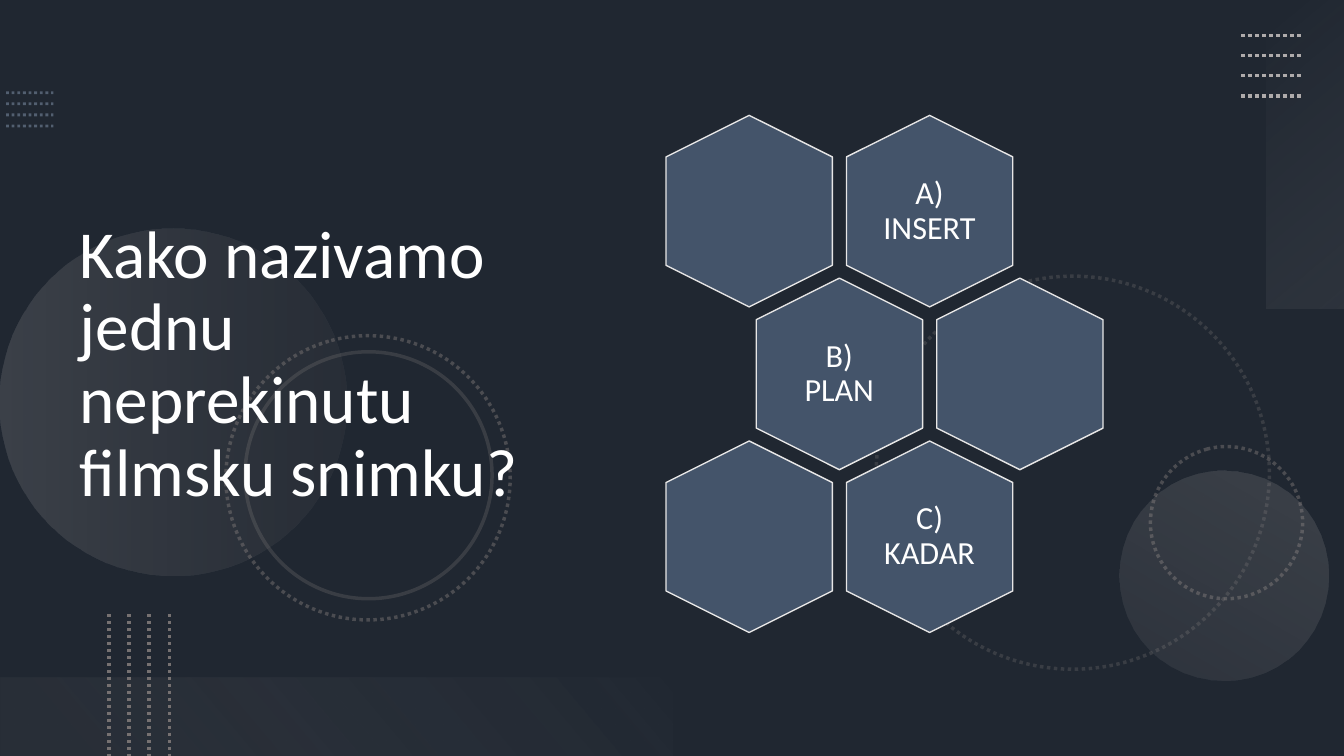
from pptx import Presentation
from pptx import util as u
from pptx.dml.color import RGBColor
from pptx.enum import dml, shapes, text
from pptx.oxml.ns import qn
from lxml import etree

theme = {
    "slate": "44546A", "black": "000000", "white": "FFFFFF", "edge": "E7E6E6",
    "steel": "8497B0", "grey": "767171", "silver": "AFABAB", "mist": "F5F5F5",
    "font": "Calibri", "title": 48, "answer": 23,
}
colour = {name: RGBColor.from_string(theme[name]) for name in
          ("slate", "black", "white", "edge", "steel", "grey", "silver", "mist")}
W, H = 13.33, 7.5
DOTS = dml.MSO_LINE.ROUND_DOT

deck = Presentation()
deck.slide_width, deck.slide_height = u.Inches(W), u.Inches(H)
slide = deck.slides.add_slide(deck.slide_layouts[5])
slide.background.fill.solid()
slide.background.fill.fore_color.rgb = colour["slate"]


def add_form(preset, box, rotation=0):
    form = slide.shapes.add_shape(preset, *(u.Inches(v) for v in box))
    form.rotation = rotation
    form.shadow.inherit = False
    form.fill.background()
    form.line.fill.background()
    return form


def fade(form, *opacities):
    """Set the opacity, in percent, of each colour in turn."""
    for tint, opacity in zip(form._element.spPr.iter(qn("a:srgbClr")), opacities):
        etree.SubElement(tint, qn("a:alpha")).set("val", str(opacity * 1000))


# Dark veil over the background
veil = add_form(shapes.MSO_SHAPE.RECTANGLE, (0, 0, W, H))
veil.fill.solid()
veil.fill.fore_color.rgb = colour["black"]
fade(veil, 53)

# Rings: left, top, diameter, dash, opacity
rings = [
    (8.69, 2.74, 3.9, DOTS, 30),
    (11.41, 4.43, 1.51, DOTS, 50),
    (2.24, 3.33, 2.82, DOTS, 50),
    (2.43, 3.49, 2.45, dml.MSO_LINE.SOLID, 30),
]
for left, top, size, dash, opacity in rings:
    ring = add_form(shapes.MSO_SHAPE.OVAL, (left, top, size, size), 75)
    ring.line.color.rgb = colour["grey"]
    ring.line.width = u.Pt(2.5)
    ring.line.dash_style = dash
    fade(ring, opacity)

# Gradient discs and bands: preset, box, rotation, angle, stops (place, colour, opacity)
OVAL, RECT = shapes.MSO_SHAPE.OVAL, shapes.MSO_SHAPE.RECTANGLE
glows = [
    (OVAL, (0, 2.27, 3.44, 3.44), 270, 90, [(0, "silver", 20), (1, "grey", 10)]),
    (OVAL, (11.1, 4.67, 2.08, 2.08), 210, 90, [(0, "silver", 10), (1, "silver", 20)]),
    (RECT, (11.42, 1.14, 3.06, 0.78), 270, 140, [(0, "mist", 0), (1, "silver", 10)]),
    (RECT, (0, 6.72, W / 2, 0.78), 180, 140, [(0.1, "grey", 10), (1, "mist", 0)]),
]
for preset, box, rotation, angle, stops in glows:
    glow = add_form(preset, box, rotation)
    glow.fill.gradient()
    glow.fill.gradient_angle = 360 - angle
    for stop, (place, name, _) in zip(glow.fill.gradient_stops, stops):
        stop.position = place
        stop.color.rgb = colour[name]
    fade(glow, *(opacity for _, _, opacity in stops))

# Dotted hatches of four lines: first line, step, colour, width, opacity
hatches = [
    ((0.06, 0.92, 0.53, 0.92), (0, 0.11), "steel", 2, 50),
    ((12.31, 0.35, 12.91, 0.35), (0, 0.2), "silver", 2.5, 100),
    ((1.08, 6.09, 1.08, H), (0.2, 0), "grey", 2.5, 100),
]
for (x1, y1, x2, y2), (dx, dy), name, width, opacity in hatches:
    for n in range(4):
        ends = (x1 + n * dx, y1 + n * dy, x2 + n * dx, y2 + n * dy)
        dotted = slide.shapes.add_connector(
            shapes.MSO_CONNECTOR.STRAIGHT, *(u.Inches(v) for v in ends))
        dotted.line.color.rgb = colour[name]
        dotted.line.width = u.Pt(width)
        dotted.line.dash_style = DOTS
        etree.SubElement(dotted._element.spPr, qn("a:effectLst"))
        if opacity < 100:
            fade(dotted, opacity)

# Question, brought in front of the decoration
question = slide.shapes.title
slide.shapes._spTree.append(question._element)
question.left, question.top = u.Inches(0.69), u.Inches(0.54)
question.width, question.height = u.Inches(4.59), u.Inches(6.17)
question.text_frame.text = "Kako nazivamo jednu neprekinutu filmsku snimku?"
question.text_frame.auto_size = text.MSO_AUTO_SIZE.NONE

# Honeycomb: rows of two cells, the middle row shifted by half a step
HEX_W, HEX_H, STEP_X, STEP_Y = 1.9, 1.65, 1.79, 1.615
honeycomb = [("", "A) INSERT"), ("B) PLAN", ""), ("", "C) KADAR")]
labels = [(question, "title", text.PP_ALIGN.LEFT)]
for row, answers in enumerate(honeycomb):
    for column, answer in enumerate(answers):
        left = 6.48 + (column + row % 2 / 2) * STEP_X
        top = 1.27 + row * STEP_Y
        cell = add_form(shapes.MSO_SHAPE.HEXAGON, (left, top, HEX_W, HEX_H), 90)
        cell.adjustments[0] = 0.25
        cell.fill.solid()
        cell.fill.fore_color.rgb = colour["slate"]
        cell.line.color.rgb = colour["edge"]
        cell.line.width = u.Pt(1)
        if answer:
            label = slide.shapes.add_textbox(
                u.Inches(left + 0.38), u.Inches(top + 0.17), u.Inches(1.14), u.Inches(1.31))
            frame = label.text_frame
            frame.text = answer
            frame.margin_left = frame.margin_right = u.Inches(0.1)
            frame.margin_top = frame.margin_bottom = u.Inches(0.1)
            labels.append((label, "answer", text.PP_ALIGN.CENTER))

# Type
for label, role, alignment in labels:
    label.text_frame.word_wrap = True
    label.text_frame.vertical_anchor = text.MSO_ANCHOR.MIDDLE
    line = label.text_frame.paragraphs[0]
    line.alignment = alignment
    line.line_spacing = 0.9
    font = line.runs[0].font
    font.name, font.size = theme["font"], u.Pt(theme[role])
    font.color.rgb = colour["white"]

deck.save("out.pptx")
